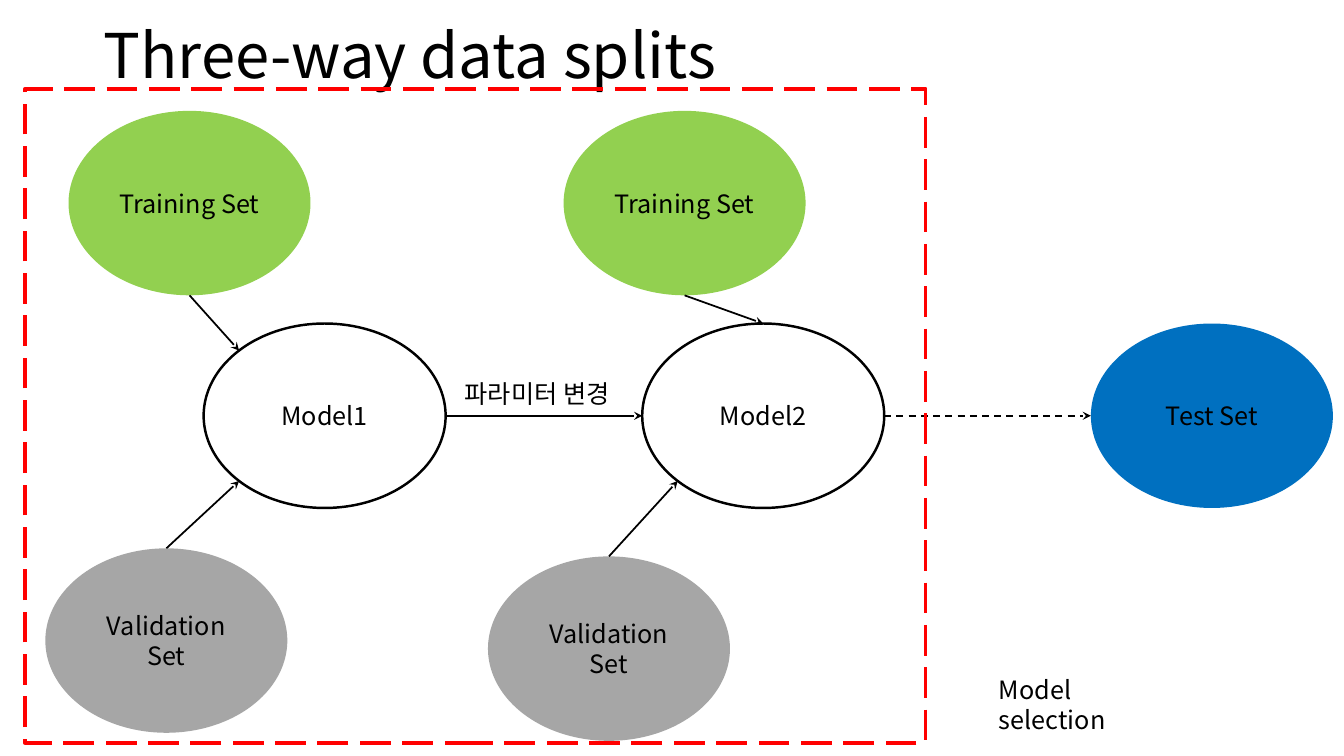
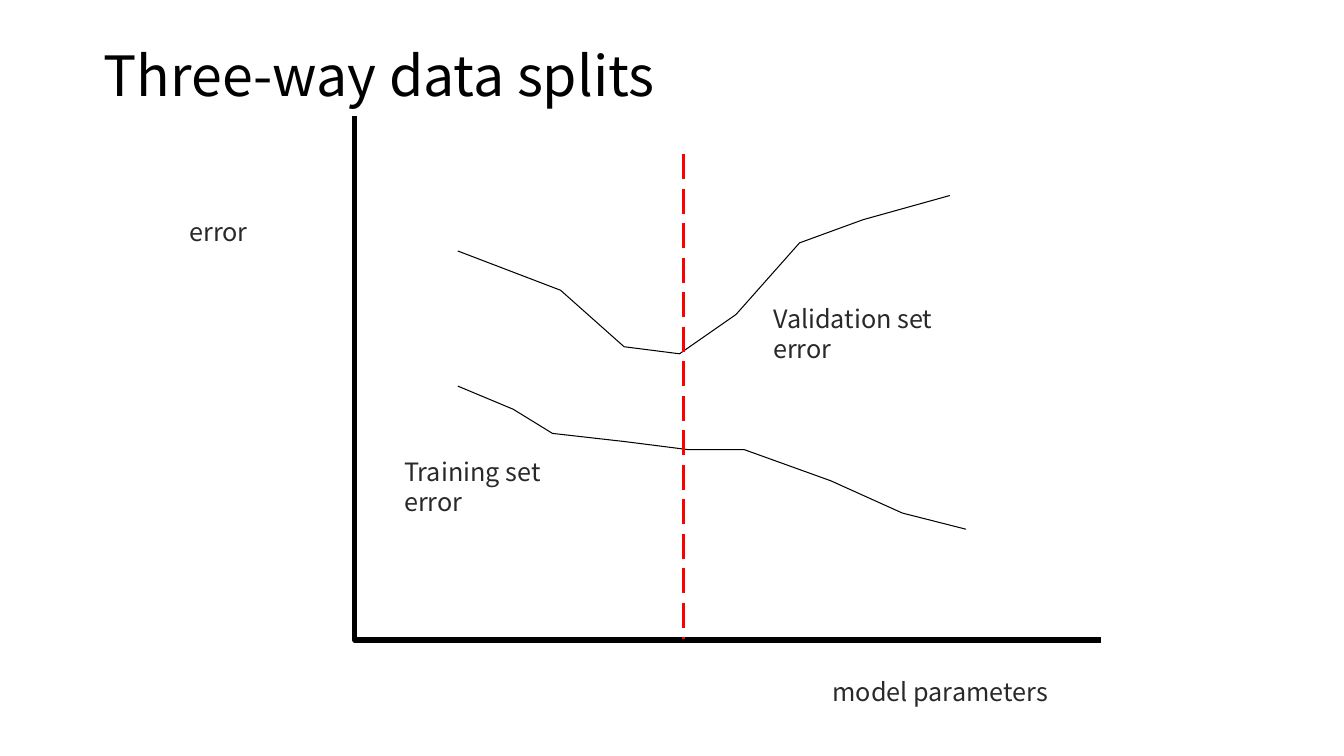
"""Build two slides on three-way data splits: the process and the error curves."""
from lxml import etree
from pptx import Presentation
from pptx import util as u
from pptx.dml.color import RGBColor
from pptx.enum import dml, shapes, text
from pptx.oxml.ns import qn

FONT = "Noto Sans CJK KR"
BLACK, CHARCOAL, RED = "000000", "292929", "FF0000"
GREEN, GREY, BLUE = "92D050", "A6A6A6", "0070C0"
DASH, LONG_DASH = dml.MSO_LINE.DASH, dml.MSO_LINE.LONG_DASH
MIDDLE, TOP = text.MSO_ANCHOR.MIDDLE, text.MSO_ANCHOR.TOP
LEFT, CENTER = text.PP_ALIGN.LEFT, text.PP_ALIGN.CENTER


def write(shape, words, size=18, color=BLACK, align=LEFT, anchor=TOP, spacing=None):
    frame = shape.text_frame
    frame.word_wrap = True
    frame.vertical_anchor = anchor
    paragraph = frame.paragraphs[0]
    paragraph.text = words
    paragraph.alignment = align
    paragraph.line_spacing = spacing
    paragraph.font.size = u.Pt(size)
    paragraph.font.color.rgb = RGBColor.from_string(color)
    paragraph.font.name = FONT
    run_defaults = paragraph._p.pPr.find(qn("a:defRPr"))
    etree.SubElement(run_defaults, qn("a:ea"), typeface=FONT)


def outline(shape, color, width, dash=None, arrow=False):
    shape.line.color.rgb = RGBColor.from_string(color)
    shape.line.width = u.Pt(width)
    if dash:
        shape.line.dash_style = dash
    properties = shape._element.spPr
    if arrow:
        etree.SubElement(properties.find(qn("a:ln")), qn("a:tailEnd"), type="stealth")
    etree.SubElement(properties, qn("a:effectLst"))


presentation = Presentation()
presentation.slide_width = u.Inches(13.33)
presentation.slide_height = u.Inches(7.5)
slides = []
for title_top, title_height, title_size in [(0.13, 0.91, 44), (0.4, 0.75, 39.6)]:
    slide = presentation.slides.add_slide(presentation.slide_layouts[6])
    title = slide.shapes.add_textbox(
        u.Inches(0.93), u.Inches(title_top), u.Inches(11.5), u.Inches(title_height))
    write(title, "Three-way data splits", title_size, anchor=MIDDLE, spacing=0.9)
    slides.append(slide)
process, curves = slides

WIDTH, HEIGHT = 2.4, 1.83
ellipses = {
    "training 1": ("Training Set", 0.68, 1.1, GREEN),
    "model 1": ("Model1", 2.02, 3.21, None),
    "validation 1": ("Validation Set", 0.45, 5.44, GREY),
    "validation 2": ("Validation Set", 4.84, 5.52, GREY),
    "model 2": ("Model2", 6.37, 3.21, None),
    "test": ("Test Set", 10.82, 3.21, BLUE),
    "training 2": ("Training Set", 5.59, 1.1, GREEN),
}
for label, left, top, fill in ellipses.values():
    ellipse = process.shapes.add_shape(
        shapes.MSO_SHAPE.OVAL, u.Inches(left), u.Inches(top), u.Inches(WIDTH), u.Inches(HEIGHT))
    write(ellipse, label, align=CENTER, anchor=MIDDLE)
    if fill:
        ellipse.fill.solid()
        ellipse.fill.fore_color.rgb = RGBColor.from_string(fill)
        ellipse.line.fill.background()
        ellipse.shadow.inherit = False
    else:
        ellipse.fill.background()
        outline(ellipse, BLACK, 1.75)

DIAGONAL = 0.5 ** 0.5
sides = {
    "top": (0, -1), "bottom": (0, 1), "left": (-1, 0), "right": (1, 0),
    "top left": (-DIAGONAL, -DIAGONAL), "bottom left": (-DIAGONAL, DIAGONAL),
}
arrows = [
    ("training 1", "bottom", "model 1", "top left", None),
    ("validation 1", "top", "model 1", "bottom left", None),
    ("model 1", "right", "model 2", "left", None),
    ("validation 2", "top", "model 2", "bottom left", None),
    ("model 2", "right", "test", "left", DASH),
    ("training 2", "bottom", "model 2", "top", None),
]
for source, source_side, target, target_side, dash in arrows:
    ends = []
    for name, side in [(source, source_side), (target, target_side)]:
        label, left, top, fill = ellipses[name]
        across, down = sides[side]
        ends += [u.Inches(left + WIDTH / 2 * (1 + across)), u.Inches(top + HEIGHT / 2 * (1 + down))]
    arrow = process.shapes.add_connector(shapes.MSO_CONNECTOR.STRAIGHT, *ends)
    outline(arrow, BLACK, 1.25, dash, arrow=True)

selection_frame = process.shapes.add_shape(
    shapes.MSO_SHAPE.RECTANGLE, u.Inches(0.25), u.Inches(0.88), u.Inches(8.93), u.Inches(6.49))
selection_frame.fill.background()
outline(selection_frame, RED, 2.75, LONG_DASH)

axes = [(3.52, 1.15), (3.52, 6.35), (10.92, 6.35)]
training_curve = [(4.54, 3.83), (5.09, 4.06), (5.48, 4.3), (6.19, 4.38), (6.82, 4.46),
                  (7.38, 4.46), (8.24, 4.77), (8.95, 5.09), (9.58, 5.25)]
validation_curve = [(4.54, 2.49), (5.56, 2.88), (6.19, 3.44), (6.74, 3.51),
                    (7.3, 3.12), (7.93, 2.41), (8.56, 2.18), (9.42, 1.94)]
for points, width in [(axes, 3.75), (training_curve, 0.75), (validation_curve, 0.75)]:
    start, *rest = [(u.Inches(x), u.Inches(y)) for x, y in points]
    builder = curves.shapes.build_freeform(*start)
    builder.add_line_segments(rest, close=False)
    curve = builder.convert_to_shape()
    curve.fill.background()
    outline(curve, BLACK, width)

labels = [
    (process, "Model selection", 9.81, 6.64, 1.9, BLACK),
    (process, "파라미터 변경", 4.51, 3.7, 1.81, BLACK),
    (curves, "model parameters", 8.16, 6.66, 3.83, CHARCOAL),
    (curves, "error", 1.78, 2.1, 1.42, CHARCOAL),
    (curves, "Training set error", 3.91, 4.48, 2.1, CHARCOAL),
    (curves, "Validation set error", 7.57, 2.96, 2.3, CHARCOAL),
]
for slide, words, left, top, width, color in labels:
    label_box = slide.shapes.add_textbox(
        u.Inches(left), u.Inches(top), u.Inches(width), u.Inches(0.4))
    write(label_box, words, color=color)

best_fit = curves.shapes.add_connector(
    shapes.MSO_CONNECTOR.STRAIGHT, u.Inches(6.78), u.Inches(1.53), u.Inches(6.78), u.Inches(6.34))
outline(best_fit, RED, 2.25, LONG_DASH)

presentation.save("out.pptx")
